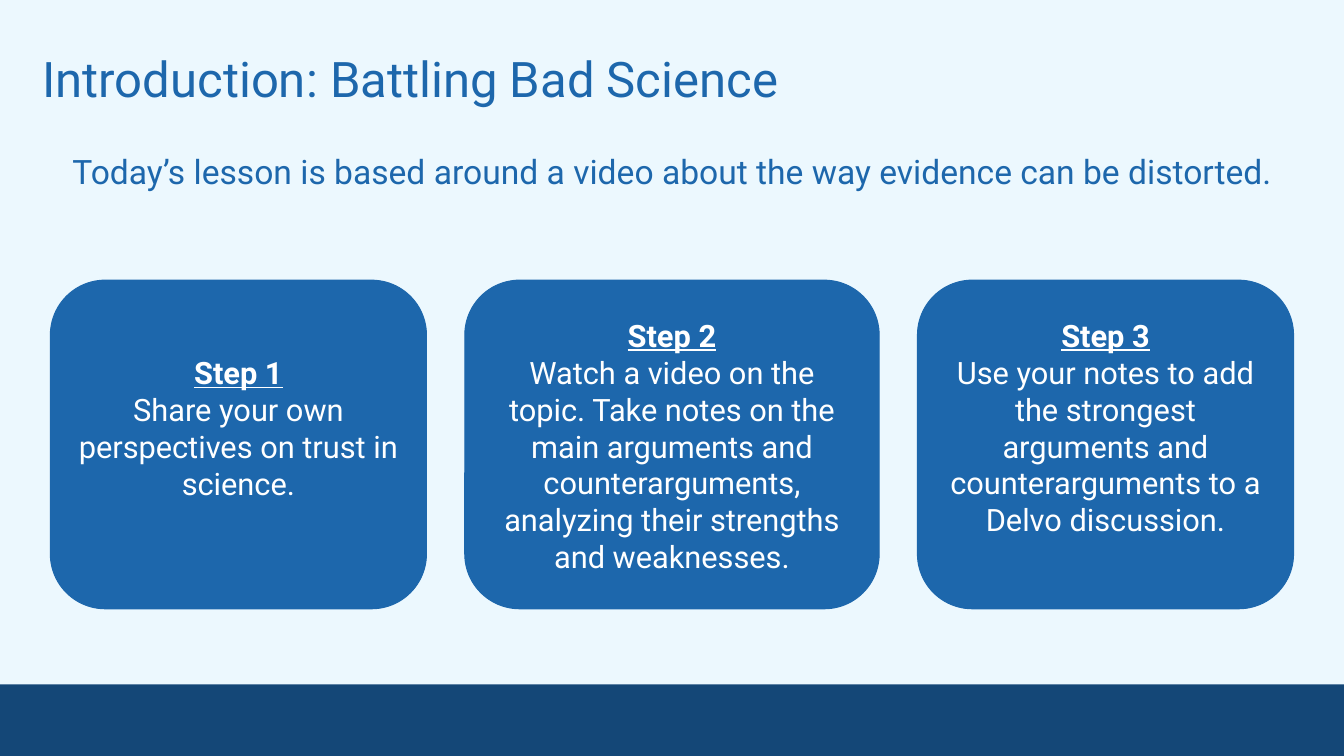
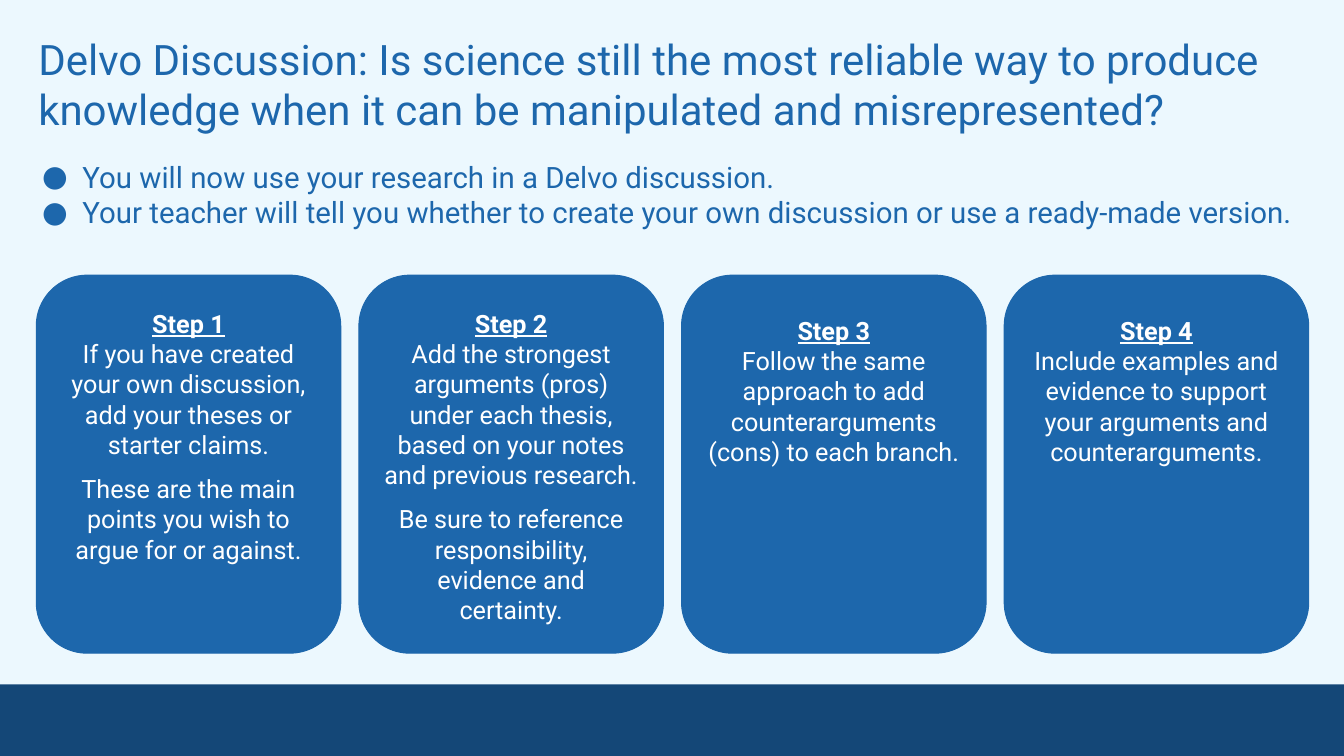
from dataclasses import dataclass

from pptx import Presentation
from pptx.dml.color import RGBColor
from pptx.enum.shapes import MSO_SHAPE
from pptx.enum.text import MSO_ANCHOR, MSO_AUTO_SIZE, PP_ALIGN
from pptx.oxml.ns import qn
from pptx.util import Inches, Pt
from lxml.etree import SubElement


@dataclass(frozen=True)
class Theme:
    font: str = "Roboto"
    background: RGBColor = RGBColor(0xEC, 0xF8, 0xFE)
    blue: RGBColor = RGBColor(0x1D, 0x67, 0xAC)
    navy: RGBColor = RGBColor(0x14, 0x47, 0x77)
    white: RGBColor = RGBColor(0xFF, 0xFF, 0xFF)
    title_long: int = 30
    title_short: int = 35
    lead: int = 24
    bullet: int = 21
    card_large: int = 22
    card_small: int = 18
    paragraph_gap: int = 10


T = Theme()


def box(left, top, width, height):
    return [Inches(v) for v in (left, top, width, height)]


def set_frame(tf, inset):
    tf.word_wrap = True
    tf.auto_size = MSO_AUTO_SIZE.NONE
    tf.vertical_anchor = MSO_ANCHOR.TOP
    tf.margin_left = tf.margin_right = Inches(inset)
    tf.margin_top = tf.margin_bottom = Inches(inset)


def next_paragraph(tf, index):
    return tf.add_paragraph() if index else tf.paragraphs[0]


def add_run(p, text, size, color=T.blue, bold=False, underline=False):
    r = p.add_run()
    r.text = text
    r.font.name = T.font
    r.font.size = Pt(size)
    r.font.color.rgb = color
    r.font.bold = bold
    r.font.underline = underline


def paint(shape, color):
    shape.shadow.inherit = False
    shape.fill.solid()
    shape.fill.fore_color.rgb = color
    shape.line.color.rgb = color
    shape.line.width = Pt(0.75)


def set_up_layout(layout, s):
    """Give the layout its background and bottom band; s only lends its shape factory."""
    fill = layout.background.fill
    fill.solid()
    fill.fore_color.rgb = T.background
    band = s.shapes.add_shape(MSO_SHAPE.RECTANGLE, *box(-0.02, 6.79, 13.37, 0.71))
    paint(band, T.navy)
    band.line.fill.background()
    band.element.nvSpPr.cNvPr.set("id", "20")
    layout.shapes.element.insert(2, band.element)


def set_title(s, text, area, size):
    title = s.shapes.title
    title.left, title.top, title.width, title.height = box(*area)
    tf = title.text_frame
    set_frame(tf, 0.13)
    p = tf.paragraphs[0]
    p.alignment = PP_ALIGN.LEFT
    add_run(p, text, size)


def add_text(s, area, size, lines, bullets=False):
    tf = s.shapes.add_textbox(*box(*area)).text_frame
    set_frame(tf, 0.1)
    for i, line in enumerate(lines):
        p = next_paragraph(tf, i)
        if bullets:
            add_bullet(p)
        else:
            p.alignment = PP_ALIGN.CENTER
        add_run(p, line, size)


def add_bullet(p):
    pPr = p._p.get_or_add_pPr()
    pPr.set("marL", str(Inches(0.5)))
    pPr.set("indent", str(Inches(-0.4)))
    color = SubElement(pPr, qn("a:buClr"))
    SubElement(color, qn("a:srgbClr"), val=str(T.blue))
    SubElement(pPr, qn("a:buFont"), typeface=T.font)
    SubElement(pPr, qn("a:buChar"), char="●")


def add_card(s, area, size, heading, paragraphs, text_top):
    card = s.shapes.add_shape(MSO_SHAPE.ROUNDED_RECTANGLE, *box(*area))
    card.adjustments[0] = 0.167
    paint(card, T.blue)
    tf = card.text_frame
    set_frame(tf, 0.1)
    tf.margin_top = Inches(text_top)
    for i, text in enumerate([heading, *paragraphs]):
        p = next_paragraph(tf, i)
        p.alignment = PP_ALIGN.CENTER
        if i > 1:
            p.space_before = Pt(T.paragraph_gap)
        add_run(p, text, size, T.white, bold=i == 0, underline=i == 0)


def add_steps(s, left, top, height, gap, size, steps):
    """Lay out numbered cards in a row; each step is (width, text_top, paragraphs)."""
    for number, (width, text_top, paragraphs) in enumerate(steps, 1):
        add_card(s, (left, top, width, height), size, f"Step {number}",
                 paragraphs, text_top)
        left += width + gap


def build_introduction(s):
    set_title(s, "Introduction: Battling Bad Science",
              (0.29, 0.35, 12.19, 0.86), T.title_short)
    add_text(s, (0.57, 1.4, 12.19, 1.01), T.lead, [
        "Today’s lesson is based around a video about the way evidence can be distorted."])
    add_steps(s, 0.5, 2.78, 3.26, 0.38, T.card_large, [
        (3.73, 0.57, ["Share your own perspectives on trust in science."]),
        (4.11, 0.2, ["Watch a video on the topic. Take notes on the main arguments and "
                     "counterarguments, analyzing their strengths and weaknesses."]),
        (3.73, 0.2, ["Use your notes to add the strongest arguments and "
                     "counterarguments to a Delvo discussion."]),
    ])


def build_discussion(s):
    set_title(s, "Delvo Discussion: Is science still the most reliable way to produce "
                 "knowledge when it can be manipulated and misrepresented?",
              (0.25, 0.2, 12.83, 1.28), T.title_long)
    add_text(s, (0.22, 1.48, 12.9, 0.91), T.bullet, [
        "You will now use your research in a Delvo discussion.",
        "Your teacher will tell you whether to create your own discussion "
        "or use a ready-made version."], bullets=True)
    width = 3.02
    add_steps(s, 0.36, 2.73, 3.75, 0.18, T.card_small, [
        (width, 0.18, ["If you have created your own discussion, add your theses "
                       "or starter claims.",
                       "These are the main points you wish to argue for or against."]),
        (width, 0.18, ["Add the strongest arguments (pros) under each thesis, based on "
                       "your notes and previous research.",
                       "Be sure to reference responsibility, evidence and certainty."]),
        (width, 0.25, ["Follow the same approach to add counterarguments (cons) "
                       "to each branch."]),
        (width, 0.25, ["Include examples and evidence to support your arguments "
                       "and counterarguments."]),
    ])


def main():
    prs = Presentation()
    prs.slide_width, prs.slide_height = Inches(13.33), Inches(7.5)
    layout = prs.slide_layouts.get_by_name("Title Only")
    introduction, discussion = [prs.slides.add_slide(layout) for _ in range(2)]
    set_up_layout(layout, introduction)
    build_introduction(introduction)
    build_discussion(discussion)
    prs.save("out.pptx")


if __name__ == "__main__":
    main()
